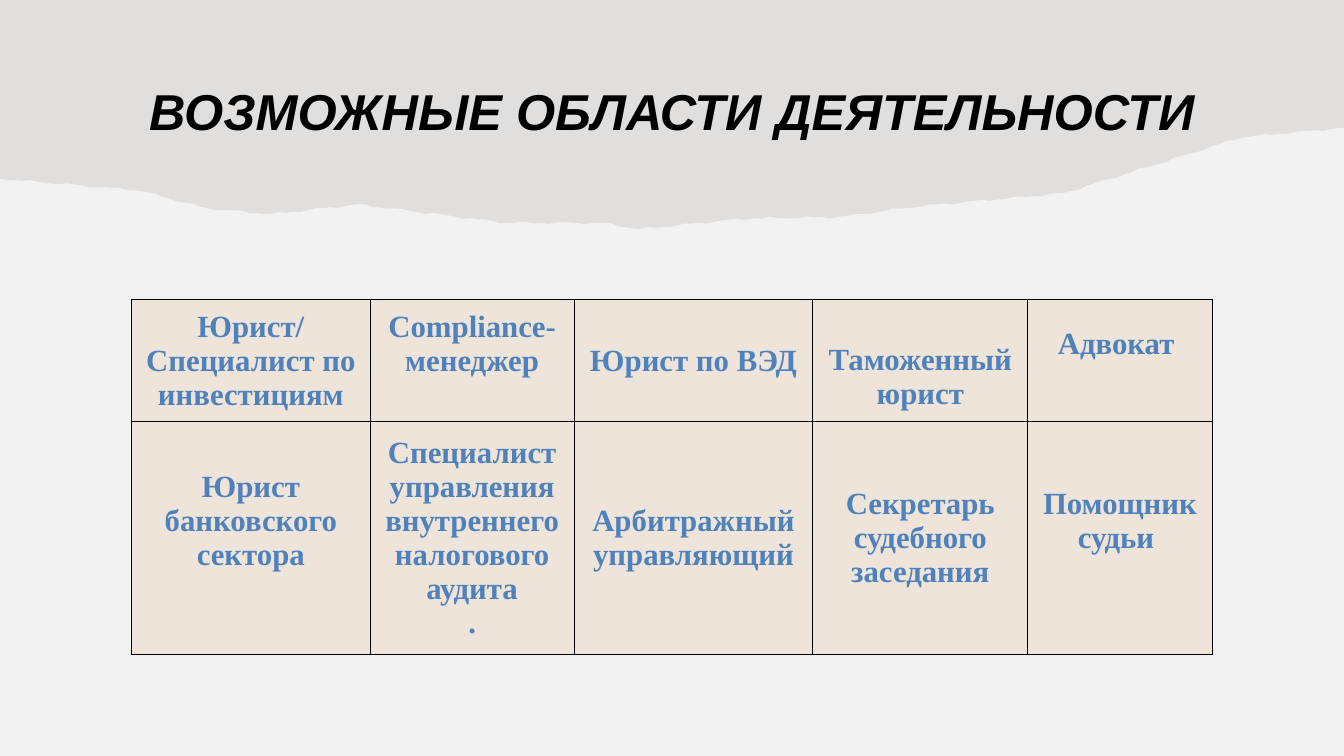
"""Build a slide with a torn-paper header and a table of legal careers."""
import itertools
import math

import lxml.etree
import pptx
import pptx.dml.color
import pptx.enum.text
import pptx.oxml.ns
import pptx.util

Pt = pptx.util.Pt
qn = pptx.oxml.ns.qn
CENTER = pptx.enum.text.PP_ALIGN.CENTER


def colour(hex_string):
    return pptx.dml.color.RGBColor.from_string(hex_string)


def format_text(paragraph, name, size, hex_string, italic=False):
    paragraph.alignment = CENTER
    font = paragraph.runs[0].font
    font.name = name
    font.size = Pt(size)
    font.bold = True
    font.italic = italic
    font.color.rgb = colour(hex_string)


slide_width, slide_height = 1440, 810
presentation = pptx.Presentation()
presentation.slide_width = Pt(slide_width)
presentation.slide_height = Pt(slide_height)
slide = presentation.slides.add_slide(presentation.slide_layouts[5])
slide.background.fill.solid()
slide.background.fill.fore_color.rgb = colour("F2F2F2")

tear_bends = [
    (0, 191.5), (150, 204), (220, 223), (290, 229.5), (384, 219),
    (540, 238.5), (647, 239), (685, 245.5), (800, 234), (900, 232.5),
    (980, 221.5), (1140, 207), (1250, 172.5), (1330, 147), (slide_width, 137),
]
tear_step = 8
torn_edge = []
for (left, left_depth), (right, right_depth) in itertools.pairwise(tear_bends):
    slope = (right_depth - left_depth) / (right - left)
    for x in range(left, right, tear_step):
        ripple = 0.9 * math.sin(x / 7) + 0.6 * math.sin(x / 3)
        torn_edge.append((x, left_depth + slope * (x - left) + ripple))
torn_edge.append(tear_bends[-1])

outline = slide.shapes.build_freeform(0, 0)
outline.add_line_segments(
    [(Pt(x), Pt(y)) for x, y in torn_edge + [(slide_width, 0)]], close=True
)
torn_paper = outline.convert_to_shape()
torn_paper.shadow.inherit = False
torn_paper.line.fill.background()
torn_paper.fill.solid()
torn_paper.fill.fore_color.rgb = colour("82766A")
paper_colour = torn_paper._element.spPr.find(qn("a:solidFill")).find(qn("a:srgbClr"))
lxml.etree.SubElement(paper_colour, qn("a:alpha"), val="15000")
slide.shapes._spTree.insert(2, torn_paper._element)

title = slide.shapes.title
title.left, title.top, title.width, title.height = Pt(98), Pt(58.3), Pt(1244), Pt(96.5)
title.text_frame.text = "ВОЗМОЖНЫЕ ОБЛАСТИ ДЕЯТЕЛЬНОСТИ"
title.text_frame.vertical_anchor = pptx.enum.text.MSO_ANCHOR.BOTTOM
heading = title.text_frame.paragraphs[0]
heading.line_spacing = 0.9
format_text(heading, "Arial", 54, "000000", italic=True)

careers = [
    [
        "Юрист/\nСпециалист по инвестициям",
        "Compliance-менеджер",
        "Юрист по ВЭД",
        "Таможенный юрист",
        "Адвокат ",
    ],
    [
        "Юрист банковского сектора",
        "Специалист управления внутреннего налогового аудита\n.",
        "Арбитражный управляющий",
        "Секретарь судебного заседания",
        "Помощник судьи ",
    ],
]
lines_above = [[0, 0, 0, 1, 0], [0, 0, 0, 0, 0]]
lines_below = [[0, 1, 0, 0, 1], [1, 0, 0, 0, 1]]
line_height = 36
side_margin, end_margin = 8.6, 4.3
column_widths = [255.8, 218.4, 255.8, 230.4, 197.4]
row_heights = [130.8, 249.6]

table = slide.shapes.add_table(
    len(row_heights), len(column_widths),
    Pt(140.9), Pt(321), Pt(sum(column_widths)), Pt(sum(row_heights)),
).table
for column, width in zip(table.columns, column_widths):
    column.width = Pt(width)
for row, height in zip(table.rows, row_heights):
    row.height = Pt(height)

for r, c in itertools.product(range(len(row_heights)), range(len(column_widths))):
    cell = table.cell(r, c)
    cell.text_frame.text = careers[r][c]
    for paragraph in cell.text_frame.paragraphs:
        format_text(paragraph, "Times New Roman", 33, "4F81BD")
    cell.vertical_anchor = pptx.enum.text.MSO_ANCHOR.MIDDLE
    cell.margin_left = cell.margin_right = Pt(side_margin)
    cell.margin_top = Pt(end_margin + lines_above[r][c] * line_height)
    cell.margin_bottom = Pt(end_margin + lines_below[r][c] * line_height)
    cell.fill.solid()
    cell.fill.fore_color.rgb = colour("EEE4DA")
    for position, side in enumerate(["lnL", "lnR", "lnT", "lnB"]):
        border = lxml.etree.Element(qn(f"a:{side}"), w=str(Pt(1)))
        border_fill = lxml.etree.SubElement(border, qn("a:solidFill"))
        lxml.etree.SubElement(border_fill, qn("a:srgbClr"), val="000000")
        cell._tc.tcPr.insert(position, border)

presentation.save("out.pptx")
